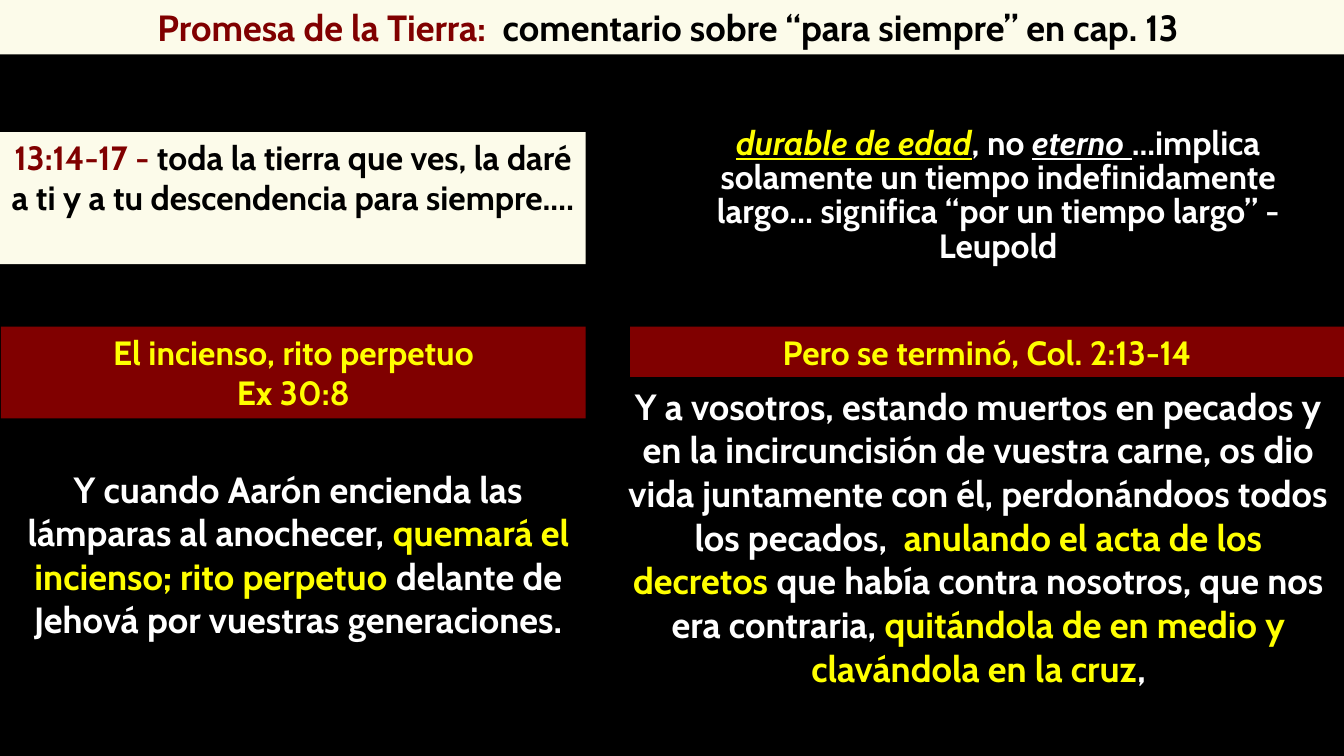
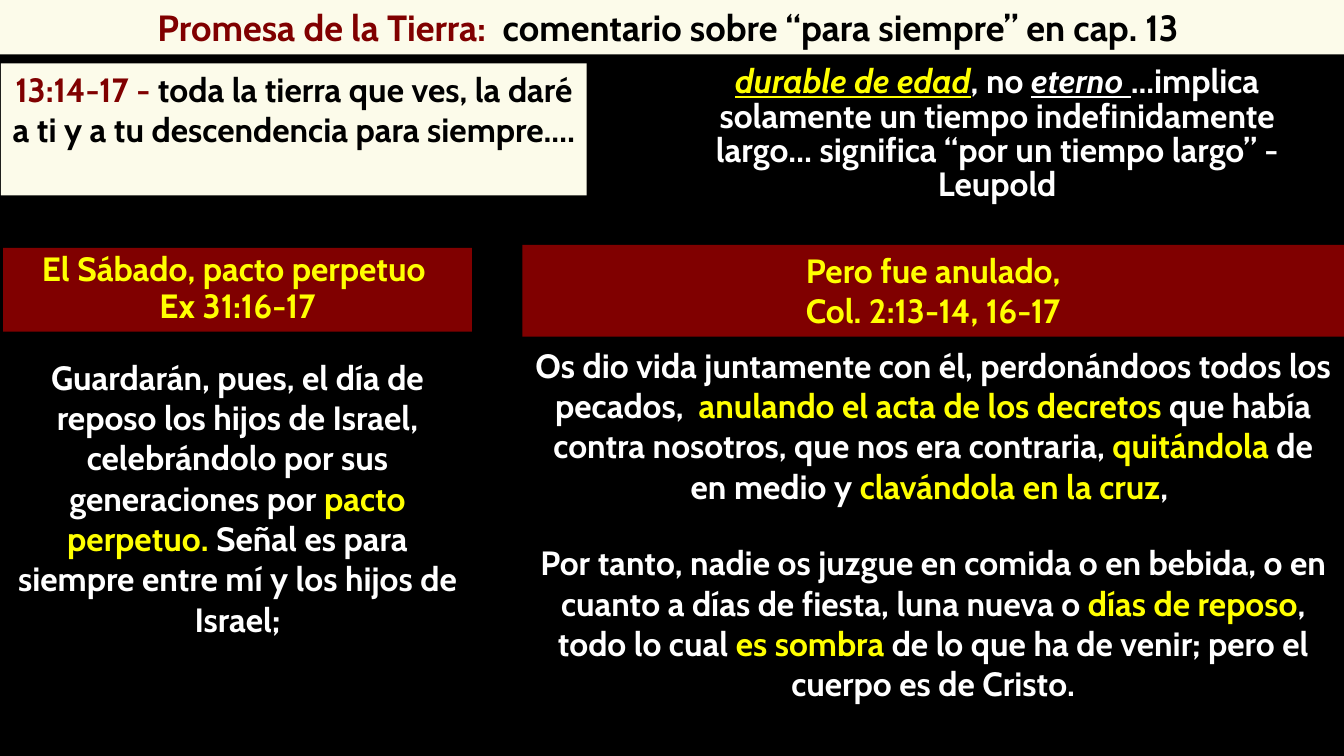
"""Build two slides comparing "para siempre" in the land promise with later rites."""
from pptx import Presentation
from pptx.dml.color import RGBColor
from pptx.enum.shapes import MSO_SHAPE as Shape
from pptx.enum.text import MSO_ANCHOR as Anchor, PP_ALIGN as Align
from pptx.util import Pt

PX = 9144
WIDTH, HEIGHT = 1333, 750
FONT = "Cabin"
BLACK = RGBColor(0x00, 0x00, 0x00)
WHITE = RGBColor(0xFF, 0xFF, 0xFF)
YELLOW = RGBColor(0xFF, 0xFF, 0x00)
MAROON = RGBColor(0x80, 0x00, 0x00)
CREAM = RGBColor(0xFC, 0xFB, 0xEA)


def add_text(page, place, paras, size=24, fill=None, spacing=None, gap=0):
    """Add centred bold text, on a filled rectangle when a fill is given."""
    left, top, width, height = (length * PX for length in place)
    if fill is None:
        box = page.shapes.add_textbox(left, top, width, height)
    else:
        box = page.shapes.add_shape(Shape.RECTANGLE, left, top, width, height)
        box.shadow.inherit = False
        box.fill.solid()
        box.fill.fore_color.rgb = fill
        box.line.fill.background()
    frame = box.text_frame
    frame.word_wrap = True
    frame.vertical_anchor = Anchor.TOP
    for index, spans in enumerate(paras):
        para = frame.add_paragraph() if index else frame.paragraphs[0]
        para.alignment = Align.CENTER
        para.line_spacing = spacing
        if index and gap:
            para.space_before = Pt(gap)
        for text, color, *marked in spans:
            span = para.add_run()
            span.text = text
            font = span.font
            font.name, font.size, font.bold = FONT, Pt(size), True
            font.color.rgb = color
            if marked:
                font.italic = font.underline = True


TITLE = [[("Promesa de la Tierra:  ", MAROON),
          ("comentario sobre “para siempre” en cap. 13", BLACK)]]
PROMISE = [[("13:14-17 - ", MAROON),
            ("toda la tierra que ves, la daré a ti y a tu descendencia para siempre.…", BLACK)]]
COMMENT = [[("durable de edad", YELLOW, True),
            (", no ", WHITE),
            ("eterno ", WHITE, True),
            ("...implica solamente un tiempo indefinidamente largo… "
             "significa “por un tiempo largo” - Leupold", WHITE)]]

INCENSE = [[("Y cuando Aarón encienda las lámparas al anochecer, ", WHITE),
            ("quemará el incienso; rito perpetuo", YELLOW),
            (" delante de Jehová por vuestras generaciones.", WHITE)]]
INCENSE_END = [[("Y a vosotros, estando muertos en pecados y en la incircuncisión de "
                 "vuestra carne, os dio vida juntamente con él, perdonándoos todos "
                 "los pecados,  ", WHITE),
                ("anulando el acta de los decretos", YELLOW),
                (" que había contra nosotros, que nos era contraria, ", WHITE),
                ("quitándola de en medio y clavándola en la cruz", YELLOW),
                (",", WHITE)]]
SABBATH = [[("Guardarán, pues, el día de reposo los hijos de Israel, "
             "celebrándolo por sus generaciones por ", WHITE),
            ("pacto perpetuo.", YELLOW),
            (" Señal es para siempre entre mí y los hijos de Israel;", WHITE)]]
SABBATH_END = [[("Os dio vida juntamente con él, perdonándoos todos los pecados,  ", WHITE),
                ("anulando el acta de los decretos", YELLOW),
                (" que había contra nosotros, que nos era contraria, ", WHITE),
                ("quitándola", YELLOW),
                (" de en medio y ", WHITE),
                ("clavándola en la cruz", YELLOW),
                (", ", WHITE)],
               [("Por tanto, nadie os juzgue en comida o en bebida, o en cuanto a "
                 "días de fiesta, luna nueva o ", WHITE),
                ("días de reposo", YELLOW),
                (", todo lo cual ", WHITE),
                ("es sombra", YELLOW),
                (" de lo que ha de venir; pero el cuerpo es de Cristo.", WHITE)]]

SLIDES = [
    {"promise": (0, 131), "comment": (668, 122), "size": 26,
     "bands": [((1, 324, 580, 91), ["El incienso, rito perpetuo", "Ex 30:8"], None),
               ((625, 324, 708, 50), ["Pero se terminó, Col. 2:13-14"], None)],
     "verses": [((0, 458, 592, 229), INCENSE),
                ((608, 376, 725, 360), INCENSE_END)]},
    {"promise": (1, 63), "comment": (667, 61), "size": 24,
     "bands": [((3, 246, 465, 83), ["El Sábado, pacto perpetuo ", "Ex 31:16-17"], 0.9),
               ((518, 243, 815, 91), ["Pero fue anulado,", "Col. 2:13-14, 16-17"], None)],
     "verses": [((3, 349, 465, 293), SABBATH),
                ((518, 337, 815, 410), SABBATH_END)]},
]

deck = Presentation()
deck.slide_width, deck.slide_height = WIDTH * PX, HEIGHT * PX
backdrop = deck.slide_master.background.fill
backdrop.solid()
backdrop.fore_color.rgb = BLACK

for content in SLIDES:
    page = deck.slides.add_slide(deck.slide_layouts[6])
    for place, lines, spacing in content["bands"]:
        add_text(page, place, [[(line, YELLOW)] for line in lines], fill=MAROON, spacing=spacing)
    for place, verse in content["verses"]:
        add_text(page, place, verse, size=content["size"], gap=26)
    add_text(page, (-8, 0, WIDTH + 9, 54), TITLE, size=26, fill=CREAM)
    add_text(page, (*content["promise"], 581, 131), PROMISE, fill=CREAM)
    add_text(page, (*content["comment"], 644, 147), COMMENT, spacing=0.85)

deck.save("out.pptx")
